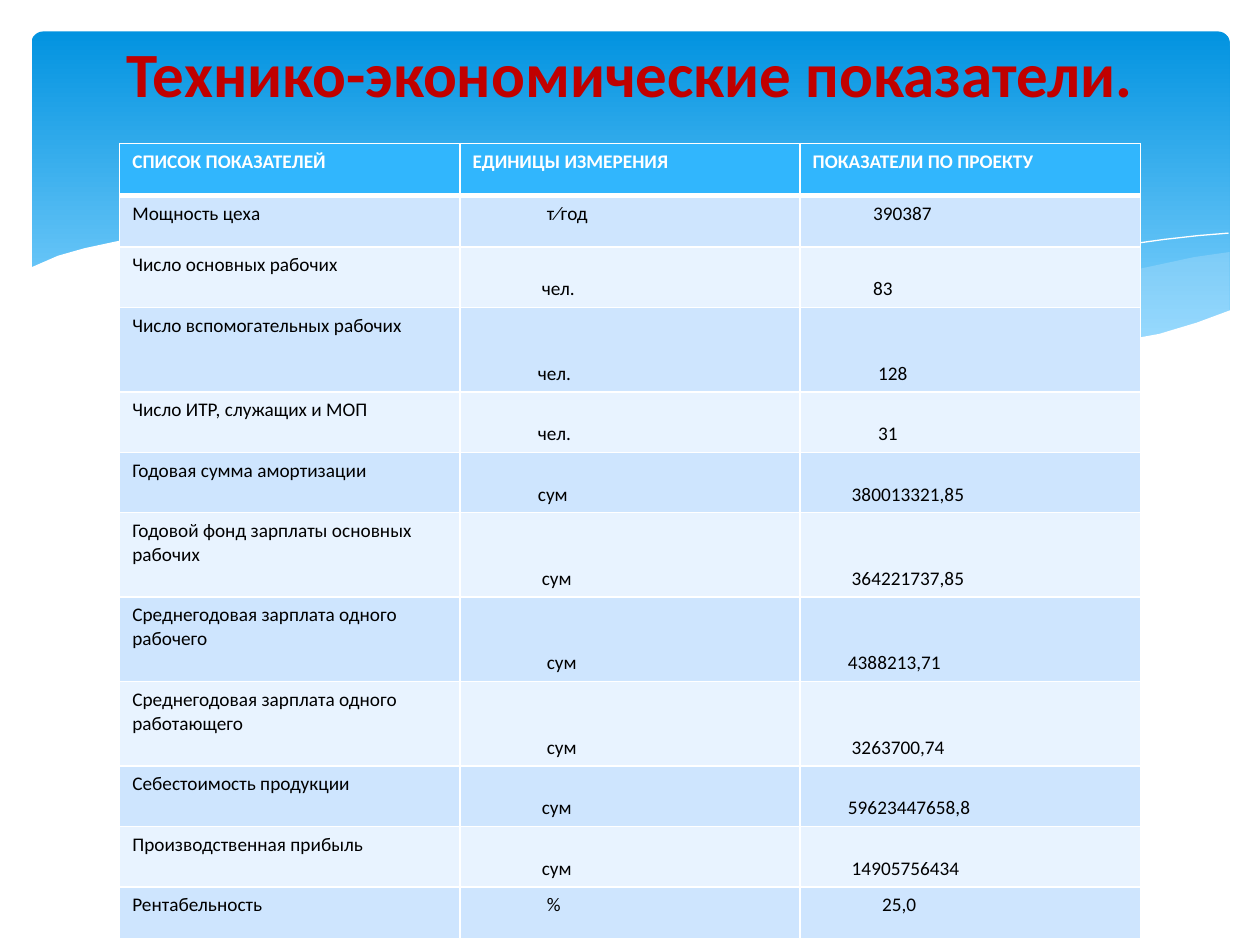
from lxml import etree
from pptx import Presentation
from pptx.dml.color import RGBColor
from pptx.enum.shapes import MSO_SHAPE
from pptx.enum.text import MSO_ANCHOR, PP_ALIGN
from pptx.oxml.ns import qn
from pptx.util import Inches, Pt

ROUNDED = MSO_SHAPE.ROUNDED_RECTANGLE
TOP, MIDDLE, BOTTOM = MSO_ANCHOR.TOP, MSO_ANCHOR.MIDDLE, MSO_ANCHOR.BOTTOM
CENTER = PP_ALIGN.CENTER

WHITE = RGBColor(0xFF, 0xFF, 0xFF)
BLACK = RGBColor(0, 0, 0)
RED = RGBColor(0xC0, 0, 0)
BLUE_TOP = RGBColor(0x02, 0x93, 0xE0)
BLUE_BOTTOM = RGBColor(0x83, 0xD3, 0xFE)
PALE_BLUE = RGBColor(0xC6, 0xE7, 0xFC)
HEADER_FILL = RGBColor(0x31, 0xB6, 0xFD)
BANDS = [RGBColor(0xCE, 0xE5, 0xFE), RGBColor(0xE8, 0xF3, 0xFF)]
FONT = "Calibri"

TITLE = "Технико-экономические показатели."
HEADER = ["СПИСОК ПОКАЗАТЕЛЕЙ", "ЕДИНИЦЫ ИЗМЕРЕНИЯ", "ПОКАЗАТЕЛИ ПО ПРОЕКТУ"]
# name, unit, value, lines, unit indent, value indent
ROWS = [
    ("Мощность цеха", "т∕год", "390387", 1, 0.69, 0.58),
    ("Число основных рабочих", "чел.", "83", 2, 0.65, 0.58),
    ("Число вспомогательных рабочих", "чел.", "128", 3, 0.62, 0.62),
    ("Число ИТР, служащих и МОП", "чел.", "31", 2, 0.62, 0.62),
    ("Годовая сумма амортизации", "сум", "380013321,85", 2, 0.62, 0.41),
    ("Годовой фонд зарплаты основных рабочих", "сум", "364221737,85", 3, 0.65, 0.41),
    ("Среднегодовая зарплата одного рабочего", "сум", "4388213,71", 3, 0.69, 0.38),
    ("Среднегодовая зарплата одного работающего", "сум", "3263700,74", 3, 0.69, 0.41),
    ("Себестоимость продукции", "сум", "59623447658,8", 2, 0.65, 0.38),
    ("Производственная прибыль", "сум", "14905756434", 2, 0.65, 0.41),
    ("Рентабельность", "%", "25,0", 1, 0.69, 0.65),
]
ROW_HEIGHTS = {1: 0.41, 2: 0.48, 3: 0.67}

RIGHT_WAVE = [
    (9.76, 2), (9.48, 2.04), (9.06, 2.13), (8.61, 2.23), (8.05, 2.37), (7.53, 2.48),
    (7.06, 2.57), (6.61, 2.65), (6.91, 2.69), (7.32, 2.74), (7.69, 2.77), (8.03, 2.78),
    (8.44, 2.77), (8.81, 2.73), (9.13, 2.67), (9.42, 2.59), (9.76, 2.47)]
LONG_WAVE = [
    (8.93, 2.73), (8.37, 2.65), (7.75, 2.54), (7.06, 2.4), (6.29, 2.22), (5.84, 2.11),
    (5.41, 2.03), (5.02, 1.96), (4.42, 1.89), (3.8, 1.85), (3.28, 1.87), (2.86, 1.91),
    (3.42, 1.99), (4.04, 2.11), (4.49, 2.22), (5.3, 2.4), (6.01, 2.55), (6.65, 2.66),
    (7.22, 2.74), (7.73, 2.77), (8.18, 2.78), (8.57, 2.77)]
LONG_LINE = [
    (3.09, 1.95), (3.44, 1.9), (3.87, 1.87), (4.5, 1.88), (5.1, 1.92), (5.82, 2),
    (6.36, 2.08), (6.95, 2.19), (7.6, 2.33), (8.31, 2.51), (9.07, 2.72)]
RIGHT_LINE = [
    (6.13, 2.57), (6.72, 2.41), (7.2, 2.29), (7.76, 2.16), (8.36, 2.04), (8.81, 1.96),
    (9.24, 1.9), (9.51, 1.87), (9.75, 1.85)]
WHITE_WAVE = [
    (9.77, 2.46), (9.5, 2.56), (9.2, 2.65), (8.87, 2.71), (8.5, 2.75), (8.09, 2.77),
    (7.61, 2.75), (7.08, 2.7), (6.48, 2.62), (5.79, 2.5), (5.03, 2.33), (4.47, 2.2),
    (3.91, 2.07), (3.4, 1.97), (2.92, 1.9), (2.5, 1.86), (2.11, 1.84), (1.77, 1.84),
    (1.46, 1.85), (1.19, 1.87), (0.95, 1.91), (0.67, 1.97), (0.46, 2.03), (0.23, 2.13),
    (0.23, 3.29), (9.77, 3.29)]


def add_curve(s, points, fill=None, alpha=100):
    pts = [(Inches(x), Inches(y)) for x, y in points]
    builder = s.shapes.build_freeform(*pts[0])
    builder.add_line_segments(pts[1:], close=fill is not None)
    sp = builder.convert_to_shape()
    sp.shadow.inherit = False
    if fill is None:
        sp.fill.background()
        sp.line.color.rgb = WHITE
        sp.line.width = Pt(0)
        return
    sp.line.fill.background()
    sp.fill.solid()
    sp.fill.fore_color.rgb = fill
    if alpha < 100:
        color = sp.element.spPr.find(qn("a:solidFill"))[0]
        etree.SubElement(color, qn("a:alpha"), val=str(alpha * 1000))


def add_backdrop(s):
    sp = s.shapes.add_shape(ROUNDED, Inches(0.25), Inches(0.25), Inches(9.51), Inches(2.7))
    sp.adjustments[0] = 0.034
    sp.shadow.inherit = False
    sp.line.fill.background()
    sp.fill.gradient()
    sp.fill.gradient_angle = 270
    stops = zip(sp.fill.gradient_stops, [(0, BLUE_TOP), (0.9, BLUE_BOTTOM)])
    for stop, (position, color) in stops:
        stop.position = position
        stop.color.rgb = color
    add_curve(s, RIGHT_WAVE, PALE_BLUE, 29)
    add_curve(s, LONG_WAVE, PALE_BLUE, 40)
    add_curve(s, LONG_LINE)
    add_curve(s, RIGHT_LINE)
    add_curve(s, WHITE_WAVE, WHITE)


def set_cell(cell, text, fill, color=BLACK, bold=False, indent=0.1, anchor=TOP, bottom=1):
    tcPr = cell._tc.get_or_add_tcPr()
    for side, width in (("L", 1), ("R", 1), ("T", 1), ("B", bottom)):
        ln = etree.SubElement(tcPr, qn("a:ln" + side), w=str(Pt(width)))
        solid = etree.SubElement(ln, qn("a:solidFill"))
        etree.SubElement(solid, qn("a:srgbClr"), val=str(WHITE))
    cell.fill.solid()
    cell.fill.fore_color.rgb = fill
    cell.margin_left = Inches(indent)
    cell.vertical_anchor = anchor
    cell.text = text
    set_font(cell.text_frame.paragraphs[0], 11, color, bold)


def set_font(p, size, color, bold):
    p.font.name = FONT
    p.font.size = Pt(size)
    p.font.bold = bold
    p.font.color.rgb = color


def add_indicators(s):
    heights = [ROW_HEIGHTS[n] for n in [1] + [row[3] for row in ROWS]]
    table = s.shapes.add_table(len(heights), len(HEADER), Inches(0.95), Inches(1.14),
                               Inches(8.1), Inches(sum(heights))).table
    for row, height in zip(table.rows, heights):
        row.height = Inches(height)
    for c, text in enumerate(HEADER):
        set_cell(table.cell(0, c), text, HEADER_FILL, WHITE, True, bottom=3)
    for r, (name, unit, value, lines, unit_indent, value_indent) in enumerate(ROWS, 1):
        fill = BANDS[(r - 1) % 2]
        anchor = BOTTOM if lines > 1 else TOP
        set_cell(table.cell(r, 0), name, fill)
        set_cell(table.cell(r, 1), unit, fill, indent=unit_indent, anchor=anchor)
        set_cell(table.cell(r, 2), value, fill, indent=value_indent, anchor=anchor)


def set_title(s):
    title = s.shapes.title
    title.left, title.top = Inches(0.5), Inches(-0.11)
    title.width, title.height = Inches(9), Inches(1.37)
    tf = title.text_frame
    tf.text = TITLE
    tf.vertical_anchor = MIDDLE
    p = tf.paragraphs[0]
    p.alignment = CENTER
    set_font(p, 36, RED, True)
    title.element.getparent().append(title.element)


def main():
    prs = Presentation()
    prs.slide_width, prs.slide_height = Inches(10), Inches(7.5)
    s = prs.slides.add_slide(prs.slide_layouts[5])
    add_backdrop(s)
    add_indicators(s)
    set_title(s)
    prs.save("out.pptx")


if __name__ == "__main__":
    main()
